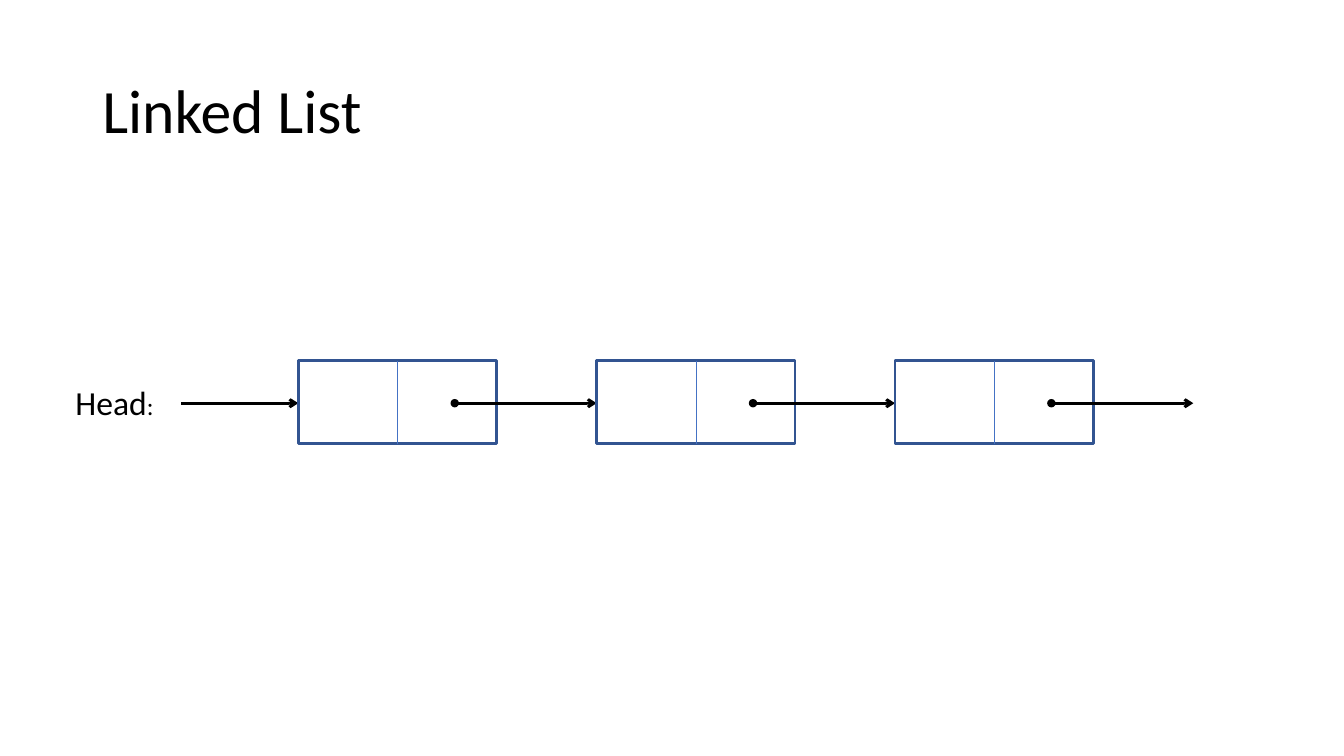
from lxml import etree
from pptx import Presentation
from pptx.dml.color import RGBColor
from pptx.enum import shapes, text
from pptx.oxml.ns import qn
from pptx.util import Pt

TITLE = "Linked List"
HEAD_LABEL = [("Head", "label"), (":", "colon")]
NODE_COUNT = 3

THEME = {
    "font": "Calibri",
    "ink": RGBColor(0x00, 0x00, 0x00),
    "border": RGBColor(0x32, 0x54, 0x91),
    "divider": RGBColor(0x44, 0x72, 0xC4),
    "sizes": {"title": 44, "label": 24, "colon": 18},
}

# Lengths in points
SLIDE_W, SLIDE_H = 960, 540
TITLE_BOX = (66, 28.8, 828, 104.4)
HEAD_BOX = (46.8, 269.3, 82.8, 36)
HEAD_ARROW_X = 129.6
NODE_X, NODE_Y, NODE_W, NODE_H = 213.1, 257.8, 141.8, 59.2
PITCH = 213.1
POINTER_OFFSET = 111.7
ARROW_Y = 288


def add_text(slide, box, runs, anchor=text.MSO_ANCHOR.TOP, spacing=1.0):
    """Add one paragraph made of (text, size name) runs."""
    tf = slide.shapes.add_textbox(*map(Pt, box)).text_frame
    tf.word_wrap = True
    tf.vertical_anchor = anchor
    p = tf.paragraphs[0]
    p.line_spacing = spacing
    for words, size in runs:
        r = p.add_run()
        r.text = words
        r.font.name = THEME["font"]
        r.font.size = Pt(THEME["sizes"][size])
        r.font.color.rgb = THEME["ink"]


def add_line(slide, start, end, color, width, **ends):
    """Add a straight line; ends may give headEnd and tailEnd types."""
    line = slide.shapes.add_connector(
        shapes.MSO_CONNECTOR.STRAIGHT, *map(Pt, start + end))
    line.line.color.rgb = color
    line.line.width = Pt(width)
    ln = line.line._get_or_add_ln()
    for tag, kind in ends.items():
        etree.SubElement(ln, qn("a:" + tag)).set("type", kind)
    etree.SubElement(line._element.spPr, qn("a:effectLst"))


def add_arrow(slide, x1, x2, **ends):
    add_line(slide, (x1, ARROW_Y), (x2, ARROW_Y), THEME["ink"], 2,
             **ends, tailEnd="arrow")


def add_node(slide, x):
    """Add a two-cell node and the pointer to the next place in the list."""
    sp = slide.shapes.add_shape(
        shapes.MSO_SHAPE.RECTANGLE, *map(Pt, (x, NODE_Y, NODE_W, NODE_H)))
    sp.shadow.inherit = False
    sp.fill.background()
    sp.line.color.rgb = THEME["border"]
    sp.line.width = Pt(2)
    middle = x + NODE_W / 2
    add_line(slide, (middle, NODE_Y), (middle, NODE_Y + NODE_H),
             THEME["divider"], 0.5)
    add_arrow(slide, x + POINTER_OFFSET, x + PITCH, headEnd="oval")


def main():
    prs = Presentation()
    prs.slide_width, prs.slide_height = Pt(SLIDE_W), Pt(SLIDE_H)
    slide = prs.slides.add_slide(prs.slide_layouts[6])
    add_text(slide, TITLE_BOX, [(TITLE, "title")],
             anchor=text.MSO_ANCHOR.MIDDLE, spacing=0.9)
    add_text(slide, HEAD_BOX, HEAD_LABEL)
    add_arrow(slide, HEAD_ARROW_X, NODE_X)
    for i in range(NODE_COUNT):
        add_node(slide, NODE_X + i * PITCH)
    prs.save("out.pptx")


if __name__ == "__main__":
    main()
